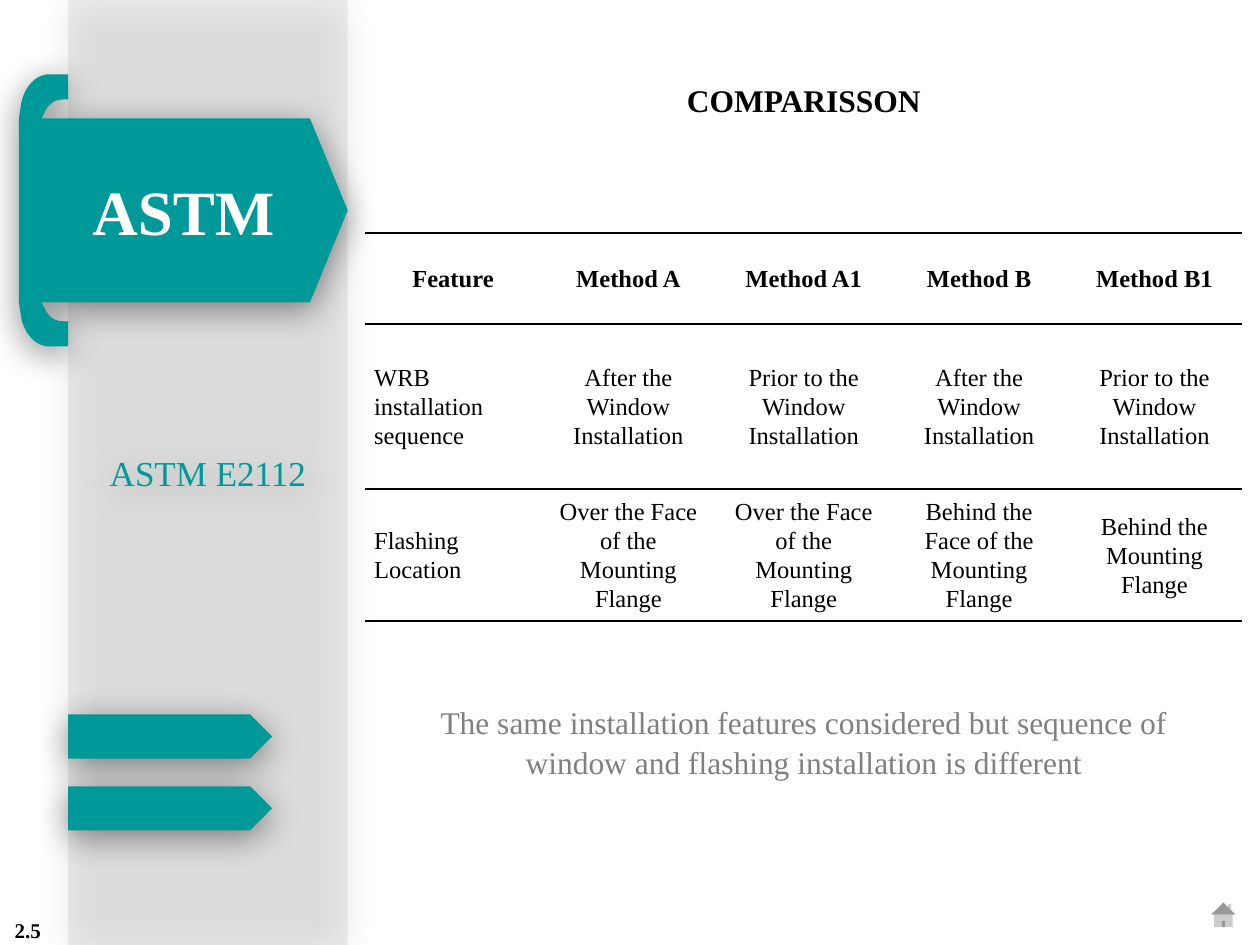
import pptx
import pptx.util
import pptx.dml.color
import pptx.enum.shapes
import pptx.enum.text
import pptx.oxml
import pptx.oxml.ns

Inches = pptx.util.Inches
Pt = pptx.util.Pt
Shape = pptx.enum.shapes.MSO_SHAPE
Align = pptx.enum.text.PP_ALIGN
Anchor = pptx.enum.text.MSO_ANCHOR

COLORS = {"teal": "009999", "band": "AFABAB", "ink": "000000",
          "note": "808080", "white": "FFFFFF"}
FONT = "Times New Roman"
NS = pptx.oxml.ns.nsdecls("a")
PLAIN = "{2D5ABB26-0587-4C30-8999-92F81FD0307C}"
ROWS = [
    ["Feature", "Method A", "Method A1", "Method B", "Method B1"],
    ["WRB installation sequence"]
    + ["After the Window Installation", "Prior to the Window Installation"] * 2,
    ["Flashing Location"] + ["Over the Face of the Mounting Flange"] * 2
    + ["Behind the Face of the Mounting Flange", "Behind the Mounting Flange"],
]


def rgb(name):
    return pptx.dml.color.RGBColor.from_string(COLORS[name])


def write(frame, text, size, color="ink", bold=False, align=Align.CENTER,
          anchor=Anchor.MIDDLE):
    frame.text = text
    frame.word_wrap = True
    frame.vertical_anchor = anchor
    para = frame.paragraphs[0]
    para.alignment = align
    font = para.runs[0].font
    font.name, font.size, font.bold = FONT, Pt(size), bold
    font.color.rgb = rgb(color)
    return para


def paint(shape, color):
    shape.shadow.inherit = False
    shape.fill.solid()
    shape.fill.fore_color.rgb = rgb(color)
    shape.line.fill.background()


def shade(shape):
    """Soft shadow straight below the shape."""
    effect = shape._element.spPr.find(pptx.oxml.ns.qn("a:effectLst"))
    effect.append(pptx.oxml.parse_xml(
        f'<a:outerShdw {NS} blurRad="{Pt(20)}" dist="{Pt(4)}" dir="5400000" '
        f'algn="t" rotWithShape="0"><a:srgbClr val="{COLORS["ink"]}">'
        '<a:alpha val="43000"/></a:srgbClr></a:outerShdw>'))


def add_panel(slide, kind, box, color):
    panel = slide.shapes.add_shape(kind, *map(Inches, box))
    paint(panel, color)
    return panel


def add_label(slide, box, *args, **kwargs):
    label = slide.shapes.add_textbox(*map(Inches, box))
    return write(label.text_frame, *args, **kwargs)


def curve(a, b, c, d, steps=12):
    """Points along a cubic curve."""
    points = []
    for i in range(steps + 1):
        t = i / steps
        u = 1 - t
        points.append(tuple(
            u**3 * p + 3 * u * u * t * q + 3 * u * t * t * r + t**3 * s
            for p, q, r, s in zip(a, b, c, d)))
    return points


def add_title(slide, box):
    title = slide.shapes.title
    title.left, title.top, title.width, title.height = map(Inches, box)
    write(title.text_frame, "COMPARISSON", 18, bold=True, anchor=Anchor.TOP)
    title.text_frame.word_wrap = False


def rule_cell(cell):
    """Lines above and below, none at the sides."""
    props = cell._tc.get_or_add_tcPr()
    line = f'<a:solidFill><a:srgbClr val="{COLORS["ink"]}"/></a:solidFill>'
    for i, (side, fill) in enumerate([("L", "<a:noFill/>"), ("R", "<a:noFill/>"),
                                      ("T", line), ("B", line)]):
        props.insert(i, pptx.oxml.parse_xml(
            f'<a:ln{side} {NS} w="{Pt(1)}">{fill}</a:ln{side}>'))


def add_grid(slide, box):
    frame = slide.shapes.add_table(len(ROWS), len(ROWS[0]), *map(Inches, box))
    table = frame.table
    table.first_row = table.horz_banding = False
    table._tbl.tblPr.find(pptx.oxml.ns.qn("a:tableStyleId")).text = PLAIN
    for col in table.columns:
        col.width = Inches(box[2] / len(ROWS[0]))
    for row, height in zip(table.rows, (0.72, 1.31, 1.05)):
        row.height = Inches(height)
    for r, texts in enumerate(ROWS):
        for c, text in enumerate(texts):
            cell = table.cell(r, c)
            cell.fill.background()
            cell.margin_left = cell.margin_right = Inches(0.07)
            cell.margin_top = cell.margin_bottom = 0
            cell.vertical_anchor = Anchor.MIDDLE
            side = Align.LEFT if r and not c else Align.CENTER
            para = write(cell.text_frame, text, 14, bold=r == 0, align=side)
            para.line_spacing = 1.07
            rule_cell(cell)


def add_ribbon(slide, box):
    left, top, width, height = box
    half = [(width, height / 2), (2.31, 0.35), (0.18, 0.35)]
    half += curve((0.21, 0.29), (0.24, 0.23), (0.29, 0.2), (0.35, 0.2))
    half += [(0.39, 0.2), (0.39, 0)]
    half += curve((0.24, 0), (0.14, 0), (0.05, 0.09), (0.02, 0.22))
    half += [(0, 0.35)]
    # The lower half mirrors the upper one
    points = half + [(x, height - y) for x, y in reversed(half[1:])]
    spots = [(Inches(left + x), Inches(top + y)) for x, y in points]
    build = slide.shapes.build_freeform(*spots[0])
    build.add_line_segments(spots[1:], close=True)
    ribbon = build.convert_to_shape()
    paint(ribbon, "teal")
    shade(ribbon)
    write(ribbon.text_frame, "ASTM", 36, "white", bold=True)


def add_side(slide, box):
    left = box[0]
    # Translucent band
    band = add_panel(slide, Shape.RECTANGLE, box, "band")
    tint = band._element.spPr.find(".//" + pptx.oxml.ns.qn("a:srgbClr"))
    tint.append(pptx.oxml.parse_xml(f'<a:alpha {NS} val="20000"/>'))
    shade(band)
    write(band.text_frame, "ASTM E2112", 20, "teal")
    # Ribbon and two arrow tabs
    add_ribbon(slide, (left - 0.39, 0.59, 2.61, 2.16))
    for i in range(2):
        tab = add_panel(slide, Shape.PENTAGON,
                        (left, 5.67 + 0.57 * i, 1.62, 0.35), "teal")
        shade(tab)


def add_foot(slide, box):
    left, top, width, height = box
    add_label(slide, (left, top + 0.15, 0.44, 0.26), "2.5", 12, bold=True)
    add_panel(slide, Shape.ACTION_BUTTON_HOME,
              (left + width - 0.26, top, 0.26, 0.32), "white")


def main():
    deck = pptx.Presentation()
    deck.slide_width, deck.slide_height = Inches(10), Inches(7.5)
    slide = deck.slides.add_slide(deck.slide_layouts[5])
    add_title(slide, (5.34, 0.59, 2.08, 0.4))
    add_grid(slide, (2.9, 1.85, 6.96, 3.08))
    add_side(slide, (0.54, 0, 2.22, 7.5))
    # Closing remark
    para = add_label(slide, (3.27, 5.51, 6.22, 0.73),
                     "The same installation features considered but sequence of "
                     "window and flashing installation is different",
                     18, "note", anchor=Anchor.TOP)
    para.line_spacing, para.space_after = 1.07, Pt(8)
    add_foot(slide, (0, 7.1, 9.84, 0.4))
    deck.save("out.pptx")


if __name__ == "__main__":
    main()
